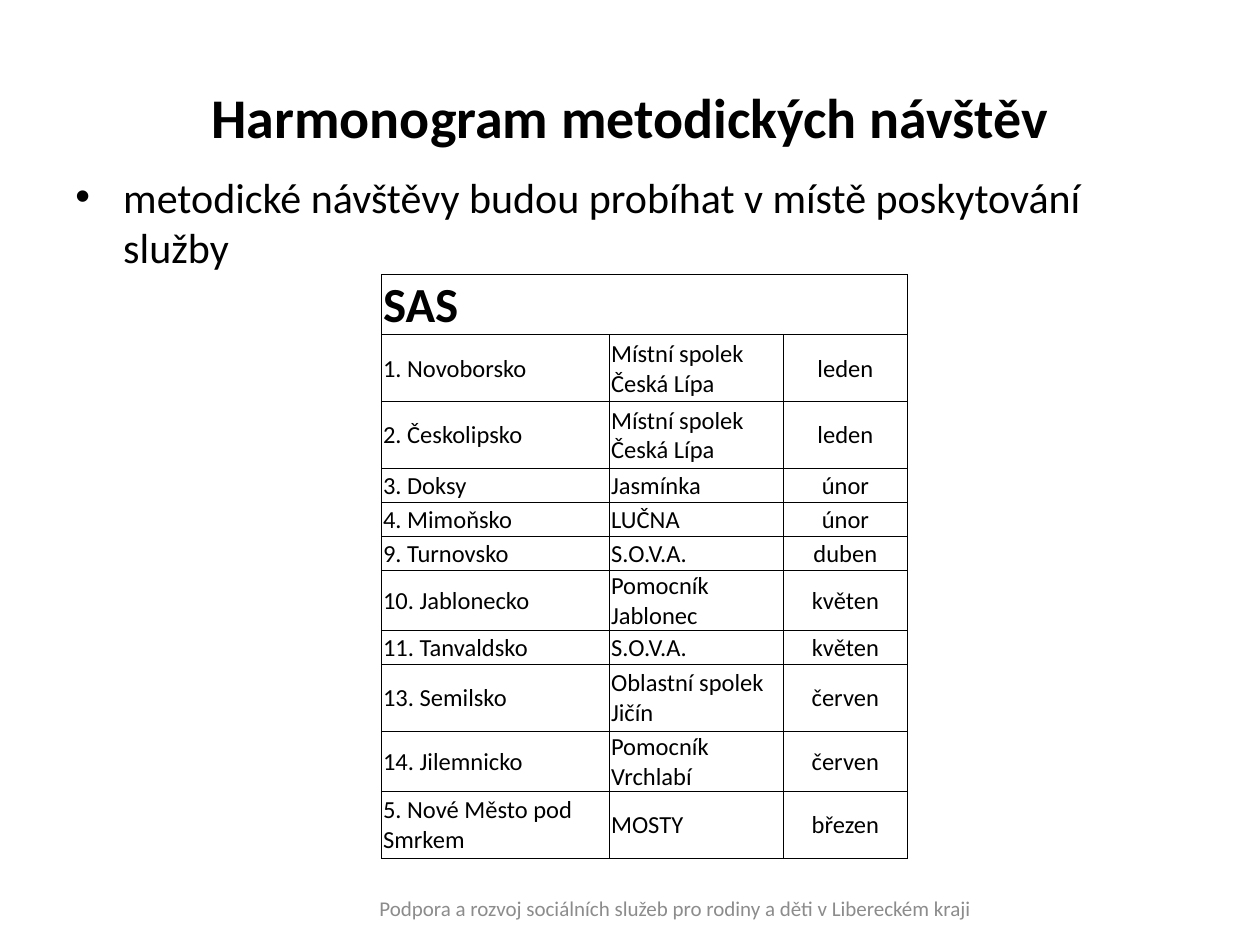
from dataclasses import dataclass

from lxml import etree
from pptx import Presentation
from pptx import util as u
from pptx.dml.color import RGBColor
from pptx.enum import text
from pptx.oxml.ns import qn

PX = 9144  # 100 px to the inch
FONT = "Calibri"
BLACK, GRAY = "000000", "8C8C8C"
LEFT, CENTER = text.PP_ALIGN.LEFT, text.PP_ALIGN.CENTER
MIDDLE, BOTTOM = text.MSO_ANCHOR.MIDDLE, text.MSO_ANCHOR.BOTTOM


@dataclass
class Visit:
    area: str
    provider: str
    month: str
    height: int = 27


VISITS = [
    Visit("1. Novoborsko", "Místní spolek Česká Lípa", "leden", 53),
    Visit("2. Českolipsko", "Místní spolek Česká Lípa", "leden", 53),
    Visit("3. Doksy", "Jasmínka", "únor"),
    Visit("4. Mimoňsko", "LUČNA", "únor"),
    Visit("9. Turnovsko", "S.O.V.A.", "duben"),
    Visit("10. Jablonecko", "Pomocník Jablonec", "květen"),
    Visit("11. Tanvaldsko", "S.O.V.A.", "květen"),
    Visit("13. Semilsko", "Oblastní spolek Jičín", "červen", 53),
    Visit("14. Jilemnicko", "Pomocník Vrchlabí", "červen"),
    Visit("5. Nové Město pod Smrkem", "MOSTY", "březen", 53),
]
COLUMNS = [181, 138, 98]
HEADER_HEIGHT = 29


def px(value: int) -> u.Emu:
    return u.Emu(value * PX)


def color(value: str) -> RGBColor:
    return RGBColor.from_string(value)


def write(frame, words: str, size: int, align=LEFT, ink: str = BLACK, bold: bool = False):
    para = frame.paragraphs[0]
    para.alignment = align
    span = para.add_run()
    span.text = words
    span.font.name = FONT
    span.font.size = u.Pt(size)
    span.font.bold = bold
    span.font.color.rgb = color(ink)
    return para


def add_box(page, left: int, top: int, width: int, height: int):
    box = page.shapes.add_textbox(px(left), px(top), px(width), px(height))
    box.text_frame.word_wrap = True
    return box


def add_bullet(para, indent: int) -> None:
    props = para._p.get_or_add_pPr()
    props.set("marL", str(px(indent)))
    props.set("indent", str(-px(indent)))
    etree.SubElement(props, qn("a:buFont"), typeface="Arial")
    etree.SubElement(props, qn("a:buChar"), char="•")


def add_borders(cell) -> None:
    props = cell._tc.get_or_add_tcPr()
    for side in ("lnL", "lnR", "lnT", "lnB"):
        line = etree.SubElement(props, qn(f"a:{side}"), w=str(u.Pt(0.5)))
        fill = etree.SubElement(line, qn("a:solidFill"))
        etree.SubElement(fill, qn("a:srgbClr"), val=BLACK)


def style_cell(cell, anchor) -> None:
    cell.margin_left = cell.margin_right = cell.margin_top = px(1)
    cell.margin_bottom = 0
    cell.vertical_anchor = anchor
    add_borders(cell)
    cell.fill.background()


def add_schedule(page, left: int, top: int) -> None:
    heights = [HEADER_HEIGHT] + [visit.height for visit in VISITS]
    frame = page.shapes.add_table(len(heights), len(COLUMNS), px(left), px(top),
                                  px(sum(COLUMNS)), px(sum(heights)))
    table = frame.table
    table.first_row = table.horz_banding = False
    for column, width in zip(table.columns, COLUMNS):
        column.width = px(width)
    for row, height in zip(table.rows, heights):
        row.height = px(height)

    # Header across all columns
    for cell in table.rows[0].cells:
        style_cell(cell, BOTTOM)
    header = table.cell(0, 0)
    header.merge(table.cell(0, len(COLUMNS) - 1))
    write(header.text_frame, "SAS", 28, bold=True)

    # One row per visit
    for index, visit in enumerate(VISITS, start=1):
        values = (visit.area, visit.provider, visit.month)
        for cell, words, align in zip(table.rows[index].cells, values, (LEFT, LEFT, CENTER)):
            style_cell(cell, MIDDLE)
            write(cell.text_frame, words, 14, align)


def main() -> None:
    deck = Presentation()
    deck.slide_width, deck.slide_height = px(1000), px(750)
    page = deck.slides.add_slide(deck.slide_layouts[5])

    # Title
    title = page.shapes.title
    title.left, title.top, title.width, title.height = px(50), px(30), px(900), px(125)
    title.text_frame.vertical_anchor = MIDDLE
    write(title.text_frame, "Harmonogram metodických návštěv", 32, CENTER, bold=True)

    # Bullet
    body = add_box(page, 50, 131, 900, 539)
    para = write(body.text_frame,
                 "metodické návštěvy budou probíhat v místě poskytování služby", 24)
    para.space_before = u.Pt(4.8)
    add_bullet(para, 38)

    # Footer
    footer = add_box(page, 272, 706, 528, 29)
    footer.text_frame.vertical_anchor = MIDDLE
    write(footer.text_frame,
          "Podpora a rozvoj sociálních služeb pro rodiny a děti v Libereckém kraji",
          12, CENTER, GRAY)

    # Schedule of visits
    add_schedule(page, 303, 218)
    deck.save("out.pptx")


if __name__ == "__main__":
    main()
